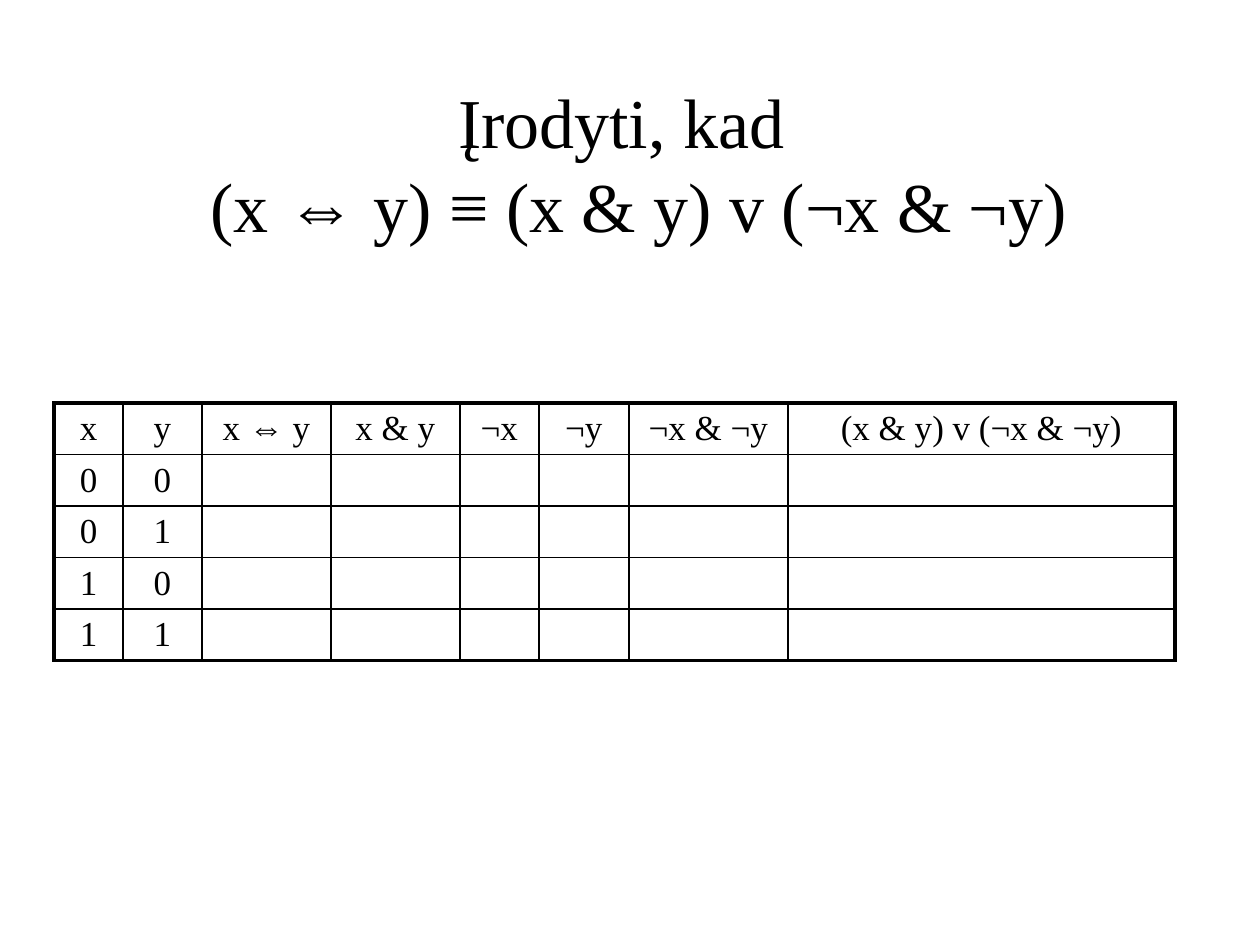
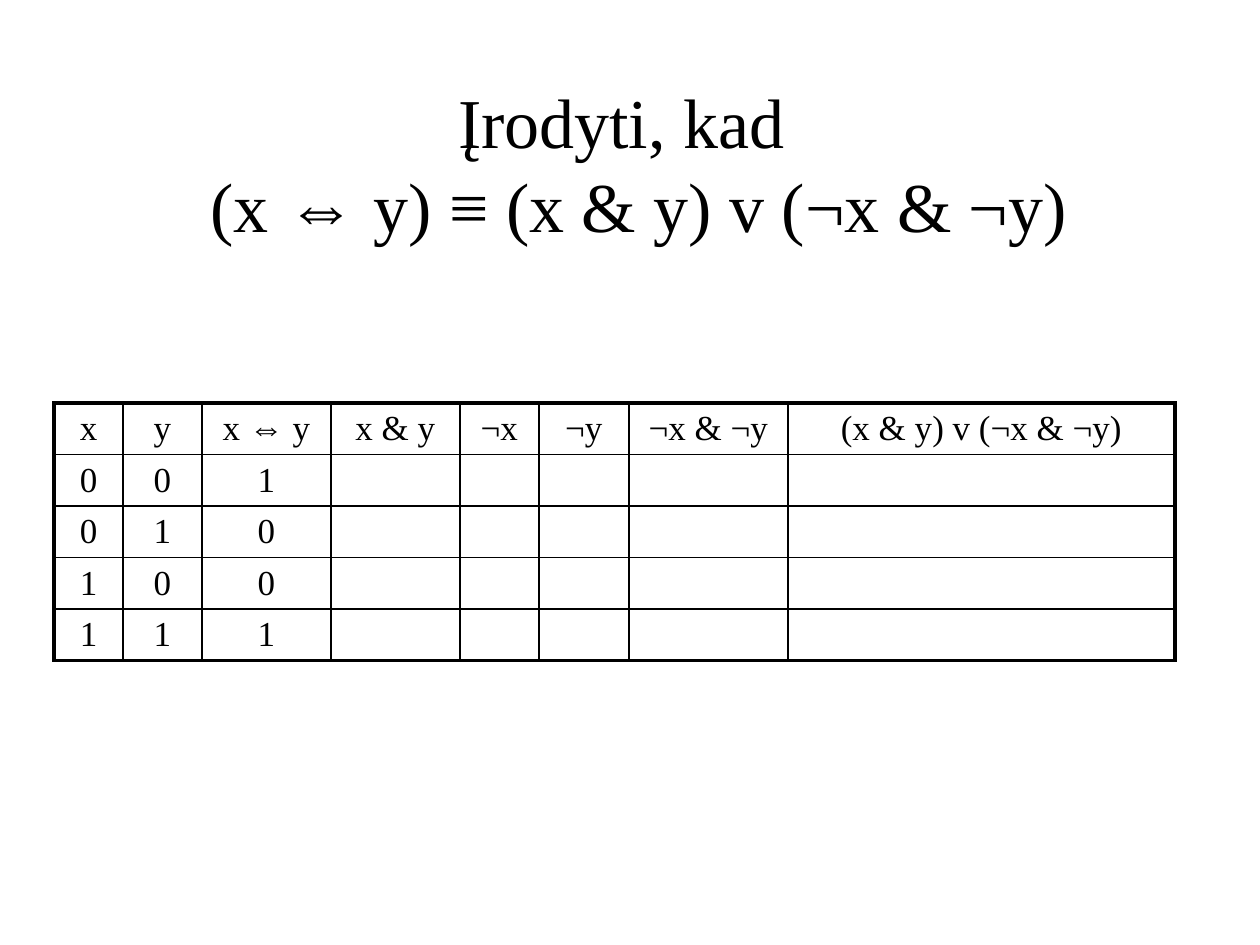
"""Two slides that build a truth table for logical equivalence."""
import pptx
import pptx.dml.color
import pptx.enum.text
import pptx.oxml
import pptx.oxml.ns
import pptx.util

TITLE = ("Įrodyti, kad ", " (x ⇔ y) ≡ (x & y) v (¬x & ¬y)")
HEADINGS = ["x", "y", "x ⇔ y", "x & y", "¬x", "¬y", "¬x & ¬y", "(x & y) v (¬x & ¬y)"]
TRUTH_ROWS = [(0, 0, 1), (0, 1, 0), (1, 0, 0), (1, 1, 1)]
FILLED_COLUMNS = [2, 3]

COLORS = {"ink": "000000", "paper": "FFFFFF"}
FONT = "Times New Roman"
TITLE_PT, CELL_PT = 40, 20
OUTER_PT, INNER_PT = 2.25, 1

PX = 914400 / 126
SLIDE_SIZE = (1260, 945)
TITLE_BOX = (95, 84, 1070, 158)
TABLE_AT = (54, 403)
COLUMN_WIDTHS = [69, 79, 129, 129, 79, 90, 159, 387]
ROW_HEIGHT = 51


def px(n):
    return pptx.util.Emu(round(n * PX))


def add_run(p, text, size):
    r = p.add_run()
    r.text = text
    r.font.name = FONT
    r.font.size = pptx.util.Pt(size)
    r.font.color.rgb = pptx.dml.color.RGBColor.from_string(COLORS["ink"])


def add_title(s):
    title = s.shapes.title
    title.left, title.top, title.width, title.height = map(px, TITLE_BOX)
    tf = title.text_frame
    tf.word_wrap = True
    tf.auto_size = pptx.enum.text.MSO_AUTO_SIZE.NONE
    tf.vertical_anchor = pptx.enum.text.MSO_ANCHOR.MIDDLE
    p = tf.paragraphs[0]
    p.alignment = pptx.enum.text.PP_ALIGN.CENTER
    add_run(p, TITLE[0], TITLE_PT)
    p.add_line_break()
    add_run(p, TITLE[1], TITLE_PT)


def add_borders(cell, outer_sides):
    tc_pr = cell._tc.get_or_add_tcPr()
    for side, outer in zip("LRTB", outer_sides):
        width = pptx.util.Pt(OUTER_PT if outer else INNER_PT)
        tc_pr.append(pptx.oxml.parse_xml(
            f'<a:ln{side} {pptx.oxml.ns.nsdecls("a")} w="{width}"><a:solidFill>'
            f'<a:srgbClr val="{COLORS["ink"]}"/></a:solidFill></a:ln{side}>'))


def add_truth_table(s, filled):
    rows = [HEADINGS] + [values[:filled] for values in TRUTH_ROWS]
    n_rows, n_cols = len(rows), len(HEADINGS)
    table = s.shapes.add_table(n_rows, n_cols, *map(px, TABLE_AT),
                               px(sum(COLUMN_WIDTHS)), px(ROW_HEIGHT * n_rows)).table
    table.first_row = table.horz_banding = False
    for column, width in zip(table.columns, COLUMN_WIDTHS):
        column.width = px(width)
    for i, values in enumerate(rows):
        table.rows[i].height = px(ROW_HEIGHT)
        for j in range(n_cols):
            cell = table.cell(i, j)
            add_borders(cell, (j == 0, j == n_cols - 1, i == 0, i == n_rows - 1))
            cell.fill.background()
            if j < len(values):
                p = cell.text_frame.paragraphs[0]
                p.alignment = pptx.enum.text.PP_ALIGN.CENTER
                add_run(p, str(values[j]), CELL_PT)


def main():
    prs = pptx.Presentation()
    prs.slide_width, prs.slide_height = map(px, SLIDE_SIZE)
    for filled in FILLED_COLUMNS:
        s = prs.slides.add_slide(prs.slide_layouts[5])
        s.background.fill.solid()
        s.background.fill.fore_color.rgb = pptx.dml.color.RGBColor.from_string(COLORS["paper"])
        add_title(s)
        add_truth_table(s, filled)
    prs.save("out.pptx")


if __name__ == "__main__":
    main()
